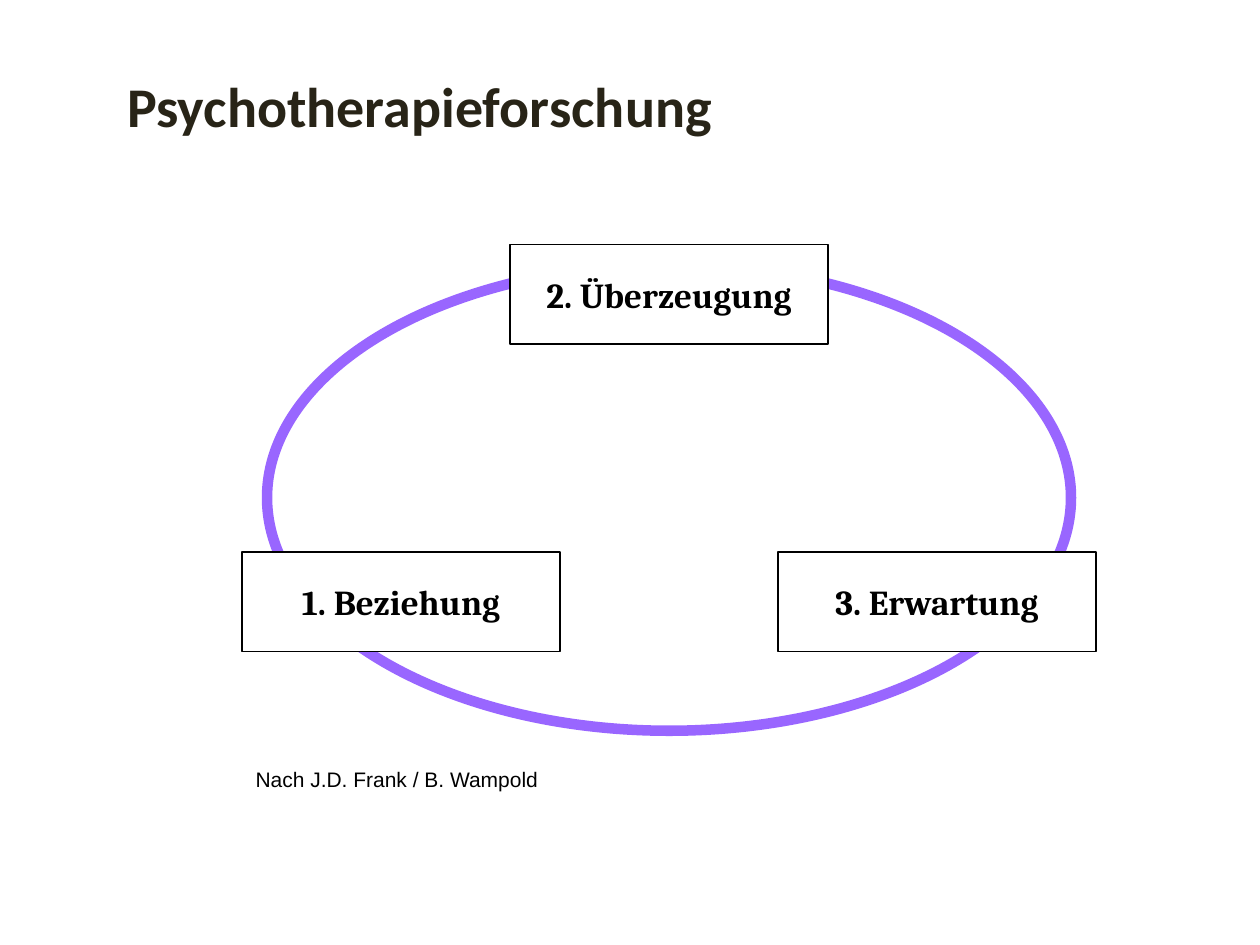
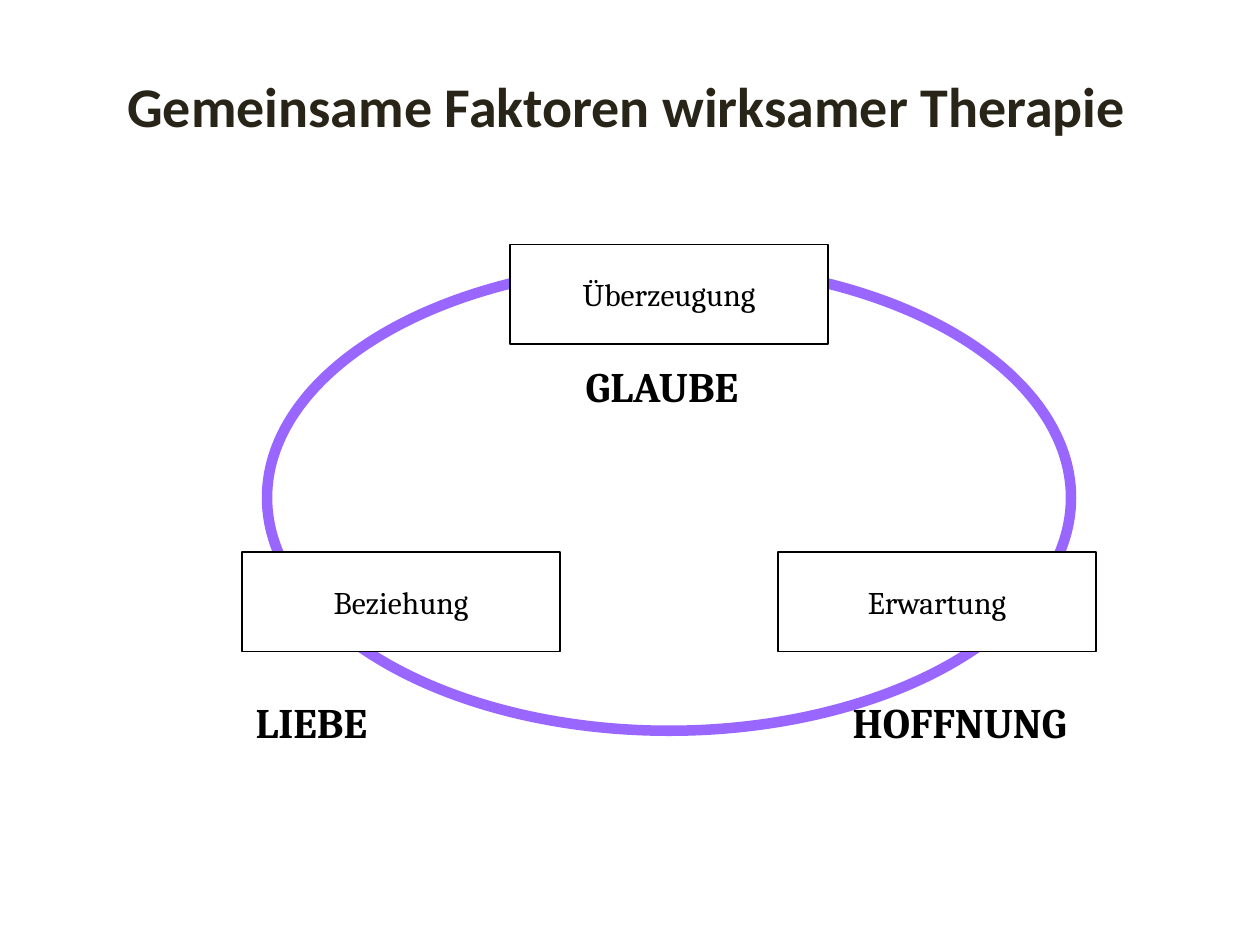
from pptx import Presentation
from pptx.dml.color import RGBColor
from pptx.enum.shapes import MSO_SHAPE as Shape
from pptx.enum.text import MSO_ANCHOR as Anchor, MSO_AUTO_SIZE as AutoSize, PP_ALIGN as Align
from pptx.util import Pt

BLACK = RGBColor(0x00, 0x00, 0x00)
WHITE = RGBColor(0xFF, 0xFF, 0xFF)
VIOLET = RGBColor(0x99, 0x66, 0xFF)
TITLE_INK = RGBColor(0x28, 0x24, 0x17)

TITLE = {"name": "Calibri", "size": Pt(32), "bold": True, "color": TITLE_INK}
FACTOR_BOLD = {"name": "Cambria", "size": Pt(20), "bold": True, "color": BLACK}
FACTOR_PLAIN = {"name": "Cambria", "size": Pt(18), "bold": False, "color": BLACK}
VIRTUE = {"name": "Cambria", "size": Pt(24), "bold": True, "color": BLACK}
SOURCE = {"name": "Arial", "size": Pt(12), "bold": False, "color": BLACK}

SLIDES = [
    {
        "title": "Psychotherapieforschung",
        "factors": ["2. Überzeugung", "3. Erwartung", "1. Beziehung"],
        "factor_format": FACTOR_BOLD,
        "notes": [("Nach J.D. Frank / B. Wampold", (139, 434.2, 385, 21.6), SOURCE, True)],
    },
    {
        "title": "Gemeinsame Faktoren wirksamer Therapie",
        "factors": ["Überzeugung", "Erwartung", "Beziehung"],
        "factor_format": FACTOR_PLAIN,
        "notes": [
            ("GLAUBE", (327.6, 202.3, 104.4, 36), VIRTUE, False),
            ("LIEBE", (139, 394.6, 80, 36), VIRTUE, False),
            ("HOFFNUNG", (480.2, 394.6, 140.4, 36), VIRTUE, False),
        ],
    },
]

TITLE_AREA = (65.5, 20.2, 629.3, 79.2)
RING_AREA = (152.6, 151.2, 459.4, 266.4)
BOX_WIDTH, BOX_HEIGHT = 181.4, 56.9
UPPER_ROW, LOWER_ROW = 139.7, 315.4
FACTOR_PLACES = [(0, UPPER_ROW), (1, LOWER_ROW), (-1, LOWER_ROW)]


def points(area):
    return [Pt(length) for length in area]


def write(box, text, text_format, align=Align.LEFT):
    para = box.text_frame.paragraphs[0]
    para.alignment = align
    span = para.add_run()
    span.text = text
    for name, value in text_format.items():
        if name == "color":
            span.font.color.rgb = value
        else:
            setattr(span.font, name, value)


def add_title(page, text):
    title = page.shapes.title
    title.left, title.top, title.width, title.height = points(TITLE_AREA)
    title.text_frame.auto_size = AutoSize.NONE
    title.text_frame.vertical_anchor = Anchor.MIDDLE
    write(title, text, TITLE)


def add_outline(page, kind, area, color, weight):
    shape = page.shapes.add_shape(kind, *points(area))
    shape.shadow.inherit = False
    shape.fill.background()
    shape.line.color.rgb = color
    shape.line.width = Pt(weight)
    return shape


def add_factors(page, factors, text_format):
    ring_left, _, ring_width, _ = RING_AREA
    for text, (side, top) in zip(factors, FACTOR_PLACES):
        center = ring_left + ring_width / 2 + side * ring_width / 3
        area = (center - BOX_WIDTH / 2, top, BOX_WIDTH, BOX_HEIGHT)
        box = add_outline(page, Shape.RECTANGLE, area, BLACK, 1)
        box.fill.solid()
        box.fill.fore_color.rgb = WHITE
        box.text_frame.word_wrap = False
        box.text_frame.vertical_anchor = Anchor.MIDDLE
        write(box, text, text_format, Align.CENTER)


def add_note(page, text, area, text_format, wrap):
    box = page.shapes.add_textbox(*points(area))
    box.text_frame.word_wrap = wrap
    box.text_frame.auto_size = AutoSize.SHAPE_TO_FIT_TEXT
    write(box, text, text_format)


def main():
    deck = Presentation()
    deck.slide_width, deck.slide_height = Pt(720), Pt(540)
    title_only = deck.slide_layouts.get_by_name("Title Only")
    for content in SLIDES:
        page = deck.slides.add_slide(title_only)
        add_title(page, content["title"])
        add_outline(page, Shape.OVAL, RING_AREA, VIOLET, 6)
        add_factors(page, content["factors"], content["factor_format"])
        for note in content["notes"]:
            add_note(page, *note)
    deck.save("out.pptx")


if __name__ == "__main__":
    main()
